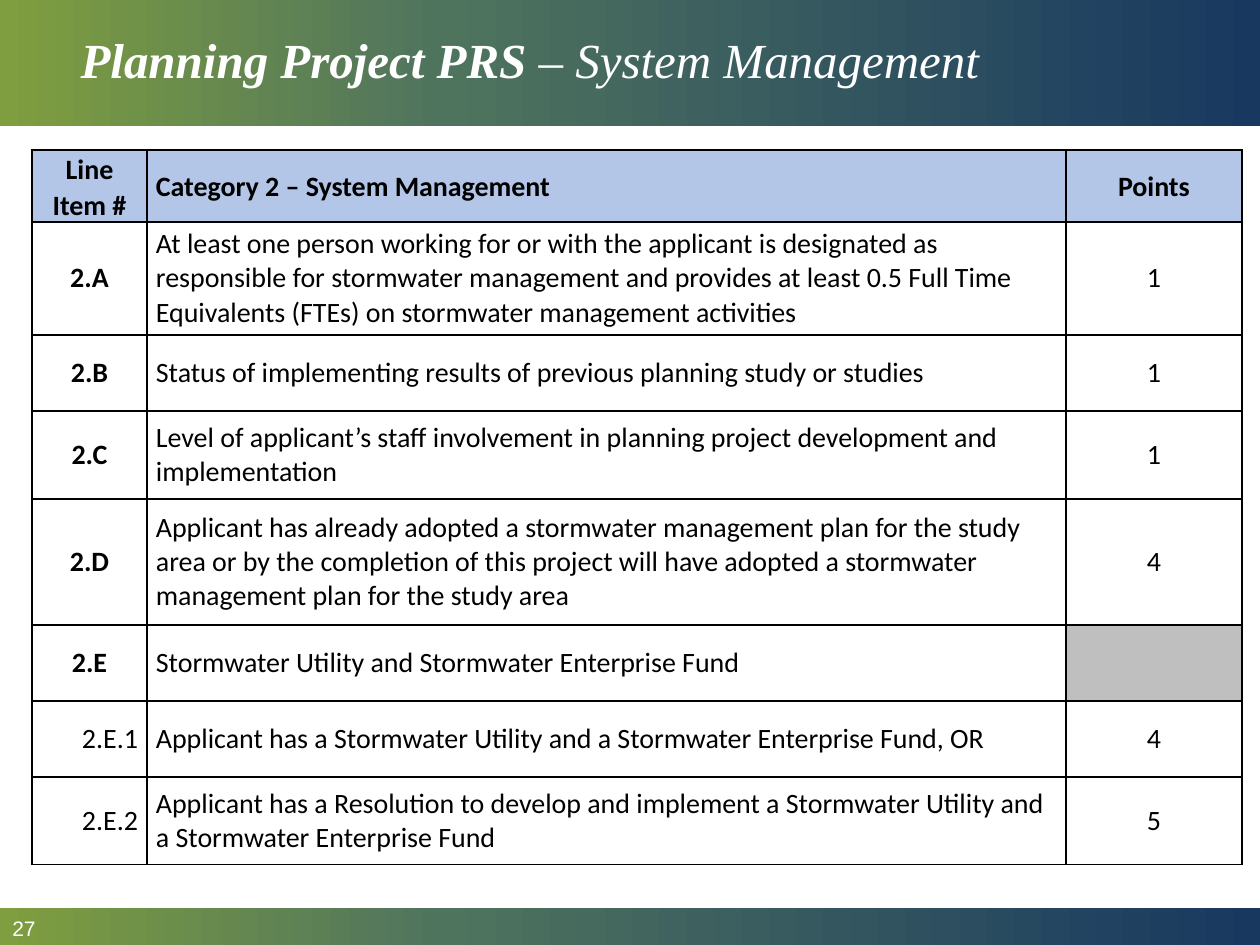
from copy import deepcopy

from lxml.etree import SubElement
from pptx import Presentation
from pptx.dml.color import RGBColor
from pptx.enum.shapes import MSO_SHAPE as Shape
from pptx.enum.text import MSO_ANCHOR as Anchor, MSO_AUTO_SIZE as AutoSize, PP_ALIGN as Align
from pptx.oxml.ns import qn
from pptx.util import Pt

SCALE = 914400 / 126  # EMU in one px
COLORS = {
    "green": "7F9E3F",
    "teal": "4F745E",
    "navy": "183860",
    "header": "B4C6E7",
    "blank": "BFBFBF",
    "white": "FFFFFF",
    "black": "000000",
}
GRADIENT = [(0, "green"), (0.35, "teal"), (1, "navy")]

COLUMN_WIDTHS = [115, 919, 176]
ROWS = [  # height, item, description, points
    (63, "Line Item #", "Category 2 – System Management", "Points"),
    (113, "2.A", "At least one person working for or with the applicant is designated as "
     "responsible for stormwater management and provides at least 0.5 Full Time "
     "Equivalents (FTEs) on stormwater management activities", "1"),
    (76, "2.B", "Status of implementing results of previous planning study or studies", "1"),
    (88, "2.C", "Level of applicant’s staff involvement in planning project development "
     "and implementation", "1"),
    (126, "2.D", "Applicant has already adopted a stormwater management plan for the study "
     "area or by the completion of this project will have adopted a stormwater "
     "management plan for the study area", "4"),
    (76, "2.E", "Stormwater Utility and Stormwater Enterprise Fund", ""),
    (76, "2.E.1", "Applicant has a Stormwater Utility and a Stormwater Enterprise Fund, OR", "4"),
    (88, "2.E.2", "Applicant has a Resolution to develop and implement a Stormwater Utility "
     "and a Stormwater Enterprise Fund", "5"),
]


def px(*lengths):
    """Turn px into EMU: one value, or a list for several."""
    emu = [round(length * SCALE) for length in lengths]
    return emu[0] if len(emu) == 1 else emu


def format_font(font, name, size, color, bold=False, italic=False):
    font.name = name
    font.size = Pt(size)
    font.color.rgb = RGBColor.from_string(COLORS[color])
    font.bold = bold
    font.italic = italic


presentation = Presentation()
presentation.slide_width, presentation.slide_height = px(1260, 945)
slide = presentation.slides.add_slide(presentation.slide_layouts[5])
title = slide.shapes.title

# Gradient bands, kept behind the title
for top, height in [(0, 126), (908, 37)]:
    band = slide.shapes.add_shape(Shape.RECTANGLE, *px(0, top, 1260, height))
    band.shadow.inherit = False
    band.line.fill.background()
    band.fill.gradient()
    band.fill.gradient_angle = 0
    stop_list = band._element.spPr.find(".//" + qn("a:gsLst"))
    stop_list.append(deepcopy(stop_list[0]))
    for stop, (position, color) in zip(band.fill.gradient_stops, GRADIENT):
        stop.position = position
        stop.color.rgb = RGBColor.from_string(COLORS[color])
    title._element.addprevious(band._element)

# Title
title.left, title.top, title.width, title.height = px(68, 0, 1056, 126)
title.text_frame.auto_size = AutoSize.NONE
title.text_frame.vertical_anchor = Anchor.MIDDLE
paragraph = title.text_frame.paragraphs[0]
paragraph.alignment = Align.LEFT
paragraph.line_spacing = 0.9
for text, bold in [("Planning Project PRS ", True), ("– System Management", False)]:
    run = paragraph.add_run()
    run.text = text
    format_font(run.font, "Times New Roman", 28, "white", bold, italic=True)

# Page number
page_number = slide.shapes.add_textbox(*px(0, 910, 241, 36))
page_number.text_frame.word_wrap = True
page_number.text_frame.vertical_anchor = Anchor.MIDDLE
page_number.text_frame.text = "27"
format_font(page_number.text_frame.paragraphs[0].runs[0].font, "Arial", 12, "white")

# Scoring table
table_height = sum(row[0] for row in ROWS)
table = slide.shapes.add_table(
    len(ROWS), len(COLUMN_WIDTHS), *px(32, 150, sum(COLUMN_WIDTHS), table_height)
).table
table.horz_banding = False
for column, width in zip(table.columns, COLUMN_WIDTHS):
    column.width = px(width)

for row_index, (height, *texts) in enumerate(ROWS):
    table.rows[row_index].height = px(height)
    is_header = row_index == 0
    is_subitem = texts[0].count(".") == 2
    for column_index, text in enumerate(texts):
        cell = table.cell(row_index, column_index)
        cell.vertical_anchor = Anchor.MIDDLE
        cell.margin_left = cell.margin_right = px(9)
        cell.margin_top = cell.margin_bottom = 0

        properties = cell._tc.get_or_add_tcPr()
        for side in ("a:lnL", "a:lnR", "a:lnT", "a:lnB"):
            border = SubElement(properties, qn(side), w=str(Pt(1)))
            border_fill = SubElement(border, qn("a:solidFill"))
            SubElement(border_fill, qn("a:srgbClr"), val=COLORS["black"])
        fill_color = "header" if is_header else "white" if text else "blank"
        cell.fill.solid()
        cell.fill.fore_color.rgb = RGBColor.from_string(COLORS[fill_color])

        if not text:
            continue
        cell.text_frame.text = text
        paragraph = cell.text_frame.paragraphs[0]
        if column_index == 1:
            paragraph.alignment = Align.LEFT
        elif column_index == 0 and is_subitem:
            paragraph.alignment = Align.RIGHT
        else:
            paragraph.alignment = Align.CENTER
        if is_header:
            paragraph.line_spacing = 1.07
        if column_index == 1 and texts[0] in ("2.D", "2.E"):
            paragraph.space_after = Pt(3)
        bold = is_header or (column_index == 0 and not is_subitem)
        format_font(paragraph.runs[0].font, "Calibri", 16, "black", bold)

presentation.save("out.pptx")
